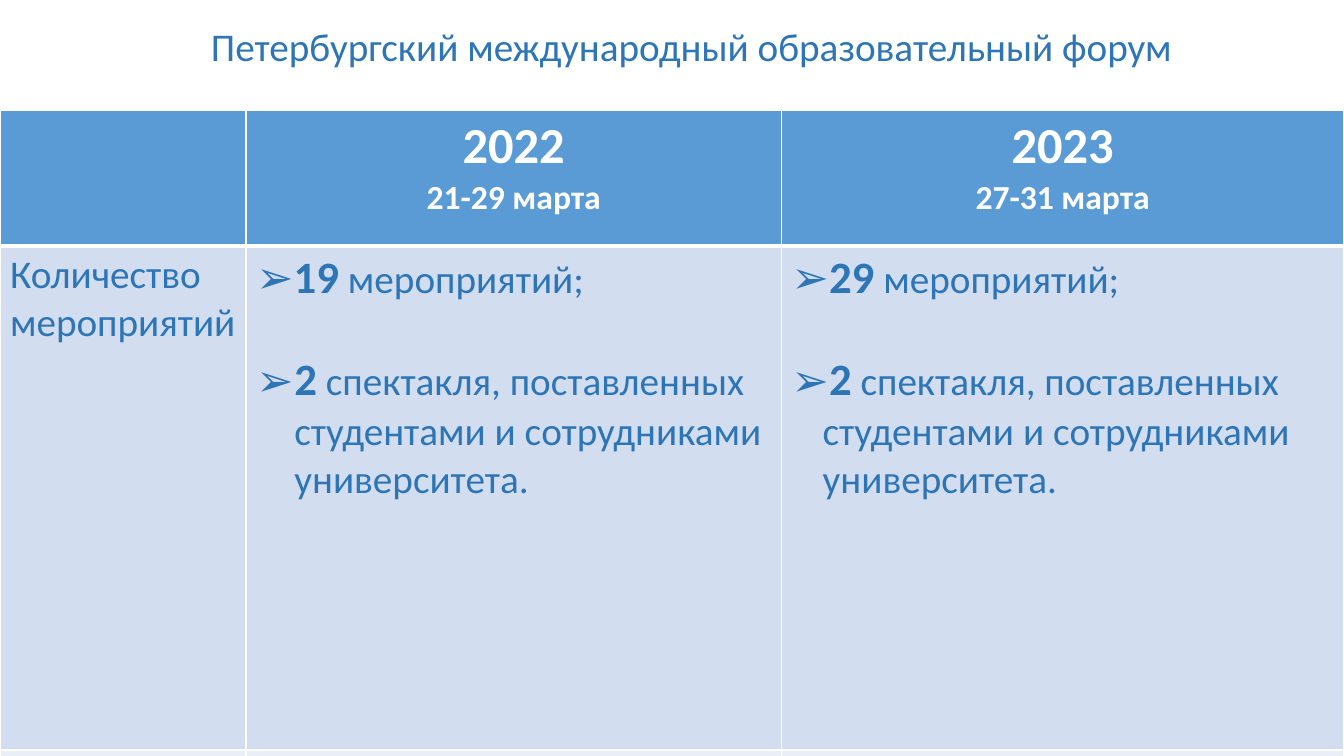
from lxml.etree import SubElement
from pptx import Presentation
from pptx.dml.color import RGBColor
from pptx.enum.text import MSO_ANCHOR, MSO_AUTO_SIZE, PP_ALIGN
from pptx.oxml.ns import qn
from pptx.util import Inches, Pt

COLORS = {"text": "2E75B6", "header": "5B9BD5", "body": "D2DEEF", "last": "EAEFF7", "white": "FFFFFF"}
FONT = "Calibri"
COLUMN_WIDTHS = (2.44, 5.31, 5.58)
ROW_HEIGHTS = (1.34, 5, 1.19)
ROW_FILLS = ("header", "body", "last")
YEARS = (
    ("2022", "21-29 марта", "19", (0.31, 0.38)),
    ("2023", "27-31 марта", "29", (0.31, 0.31)),
)


def style_font(font, color, size=None, bold=None):
    font.name = FONT
    font.color.rgb = RGBColor.from_string(COLORS[color])
    if size:
        font.size = Pt(size)
    if bold is not None:
        font.bold = bold


def add_title(slide, left, top, width, height):
    title = slide.shapes.title
    title.left, title.top, title.width, title.height = map(Inches, (left, top, width, height))
    frame = title.text_frame
    frame.text = "Петербургский международный образовательный форум"
    frame.auto_size = MSO_AUTO_SIZE.NONE
    frame.word_wrap = True
    frame.vertical_anchor = MSO_ANCHOR.TOP
    frame.margin_left = Inches(0.12)
    paragraph = frame.paragraphs[0]
    paragraph.alignment = PP_ALIGN.CENTER
    paragraph.line_spacing = 0.9
    style_font(paragraph.font, "text", 28, False)


def style_cell(cell, fill, bottom_width):
    properties = cell._tc.get_or_add_tcPr()
    for side, width in (("L", 1), ("R", 1), ("T", 1), ("B", bottom_width)):
        line = SubElement(properties, qn(f"a:ln{side}"), w=str(Pt(width)))
        SubElement(SubElement(line, qn("a:solidFill")), qn("a:srgbClr"), val=COLORS["white"])
    cell.fill.solid()
    cell.fill.fore_color.rgb = RGBColor.from_string(COLORS[fill])


def fill_header(cell, year, dates):
    cell.text = f"{year}\n{dates}"
    for paragraph, size in zip(cell.text_frame.paragraphs, (36, 24)):
        paragraph.alignment = PP_ALIGN.CENTER
        style_font(paragraph.font, "white", size, True)


def add_bullet(paragraph, indent, number, wording):
    properties = paragraph._p.get_or_add_pPr()
    properties.set("marL", str(Inches(indent)))
    properties.set("indent", str(-Inches(indent)))
    SubElement(properties, qn("a:buFont"), typeface=FONT)
    SubElement(properties, qn("a:buChar"), char="➢")
    style_font(paragraph.font, "text")
    for text, size, bold in ((number, 32, True), (wording, 28, False)):
        run = paragraph.add_run()
        run.text = text
        run.font.size = Pt(size)
        run.font.bold = bold


def fill_events(cell, count, indents):
    frame = cell.text_frame
    add_bullet(frame.paragraphs[0], indents[0], count, " мероприятий;")
    performances = frame.add_paragraph()
    performances.space_before = Pt(34)
    add_bullet(performances, indents[1], "2",
               " спектакля, поставленных студентами и сотрудниками университета.")


def add_comparison(slide, left, top):
    table = slide.shapes.add_table(
        len(ROW_HEIGHTS), len(COLUMN_WIDTHS), Inches(left), Inches(top),
        Inches(sum(COLUMN_WIDTHS)), Inches(sum(ROW_HEIGHTS))).table
    for column, width in zip(table.columns, COLUMN_WIDTHS):
        column.width = Inches(width)
    for row, height, fill in zip(table.rows, ROW_HEIGHTS, ROW_FILLS):
        row.height = Inches(height)
        for cell in row.cells:
            style_cell(cell, fill, 3 if fill == "header" else 1)
    label = table.cell(1, 0)
    label.text = "Количество мероприятий"
    style_font(label.text_frame.paragraphs[0].font, "text", 28, False)
    for column, (year, dates, count, indents) in enumerate(YEARS, start=1):
        fill_header(table.cell(0, column), year, dates)
        fill_events(table.cell(1, column), count, indents)


def main():
    presentation = Presentation()
    presentation.slide_width = Inches(13.33)
    presentation.slide_height = Inches(7.5)
    slide = presentation.slides.add_slide(presentation.slide_layouts[5])
    add_title(slide, 0.8, 0.22, 12.09, 0.88)
    add_comparison(slide, 0, 1.1)
    presentation.save("out.pptx")


if __name__ == "__main__":
    main()
